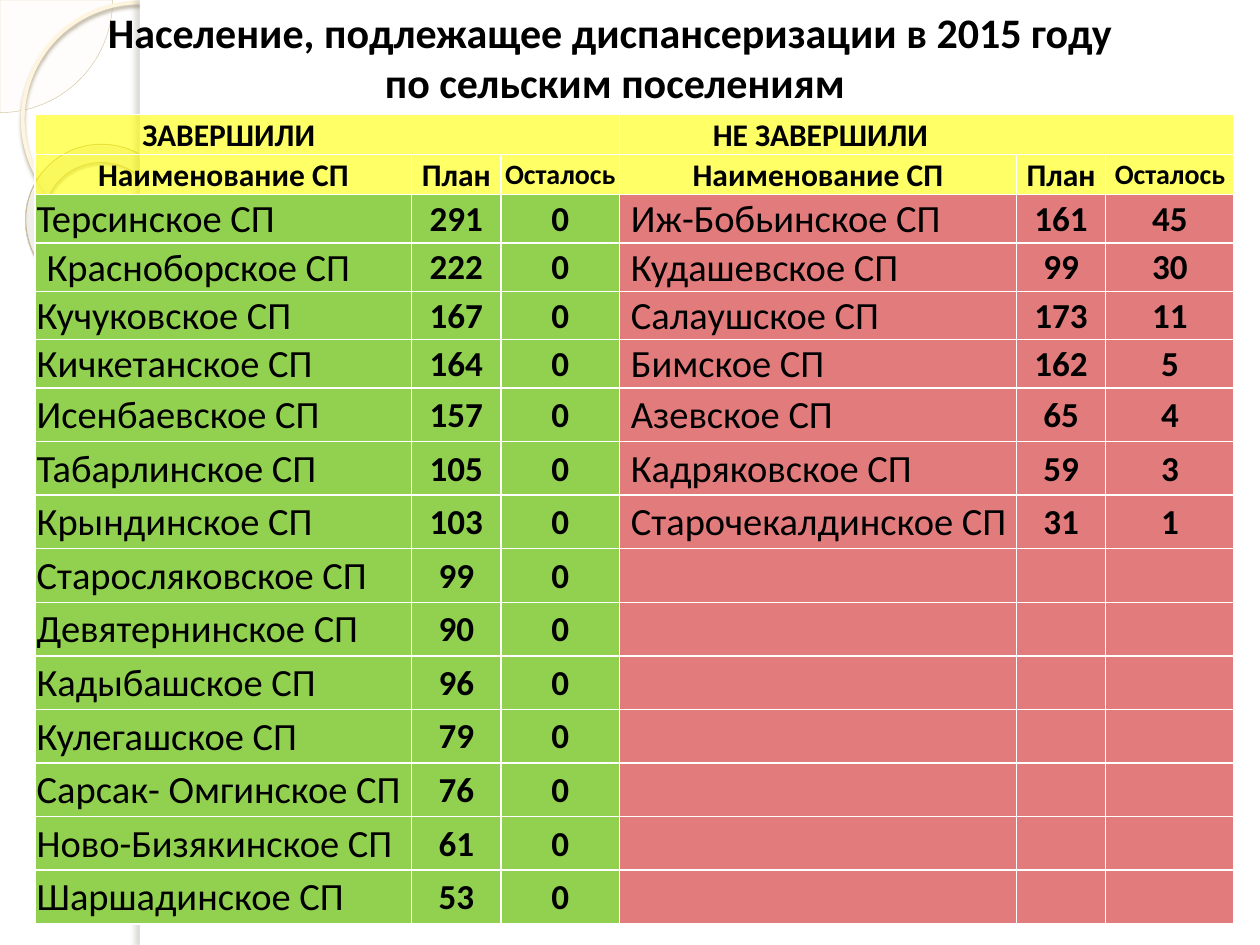
from itertools import zip_longest

from lxml.etree import SubElement
from pptx import Presentation
from pptx.dml.color import RGBColor
from pptx.enum.shapes import MSO_SHAPE
from pptx.enum.text import MSO_ANCHOR, MSO_AUTO_SIZE, PP_ALIGN
from pptx.oxml import parse_xml
from pptx.oxml.ns import nsdecls, qn
from pptx.util import Cm, Pt

YELLOW, GREEN, RED = "FFFF00", "92D050", "E17B7C"

COMPLETED = [
    ("Терсинское СП", 291), ("Красноборское СП", 222), ("Кучуковское СП", 167),
    ("Кичкетанское СП", 164), ("Исенбаевское СП", 157), ("Табарлинское СП", 105),
    ("Крындинское СП", 103), ("Старосляковское СП", 99), ("Девятернинское СП", 90),
    ("Кадыбашское СП", 96), ("Кулегашское СП", 79), ("Сарсак- Омгинское СП", 76),
    ("Ново-Бизякинское СП", 61), ("Шаршадинское СП", 53),
]
NOT_COMPLETED = [
    ("Иж-Бобьинское СП", 161, 45), ("Кудашевское СП", 99, 30),
    ("Салаушское СП", 173, 11), ("Бимское СП", 162, 5), ("Азевское СП", 65, 4),
    ("Кадряковское СП", 59, 3), ("Старочекалдинское СП", 31, 1),
]
COLUMN_WIDTHS = [7.59, 1.8, 2.39, 8, 1.8, 2.59]
ROW_HEIGHTS = [0.79] * 2 + [0.95] * 4 + [1.08] * 10
INDENT = 0.2


def color(hex_string):
    return RGBColor.from_string(hex_string)


def set_alpha(fill, percent):
    element = fill._xPr.find(qn("a:solidFill"))[0]
    SubElement(element, qn("a:alpha"), val=str(percent * 1000))


class SlideBuilder:
    font_name = "Calibri"
    text_color = "000000"
    border_color = "FFFFFF"

    def __init__(self, slide):
        self.slide = slide

    def format_text(self, paragraph, size, bold=True, alignment=PP_ALIGN.CENTER):
        paragraph.alignment = alignment
        values = {"name": self.font_name, "size": Pt(size), "bold": bold}
        for run in paragraph.runs:
            for name, value in values.items():
                setattr(run.font, name, value)
            run.font.color.rgb = color(self.text_color)

    def shape(self, kind, box, fill=None, alpha=None, line=None, shadow=None,
              adjustments=(), rotation=0):
        """Line is (color, points); shadow is (color, alpha, blur, distance, angle)."""
        shape = self.slide.shapes.add_shape(kind, *map(Cm, box))
        shape.rotation = rotation
        shape.shadow.inherit = False
        for index, value in enumerate(adjustments):
            shape.adjustments[index] = value
        if fill:
            shape.fill.solid()
            shape.fill.fore_color.rgb = color(fill)
            if alpha:
                set_alpha(shape.fill, alpha)
        else:
            shape.fill.background()
        if line:
            shape.line.color.rgb = color(line[0])
            shape.line.width = Pt(line[1])
        else:
            shape.line.fill.background()
        if shadow:
            self.add_shadow(shape, *shadow)
        return shape

    def add_shadow(self, shape, shade, alpha, blur, distance, angle):
        effects = shape._element.spPr.find(qn("a:effectLst"))
        outer = SubElement(effects, qn("a:outerShdw"), blurRad=str(Pt(blur)),
                           dist=str(Pt(distance)), dir=str(angle * 60000),
                           rotWithShape="0")
        shade_element = SubElement(outer, qn("a:srgbClr"), val=shade)
        SubElement(shade_element, qn("a:alpha"), val=str(alpha * 1000))

    def radial_gradient(self, shape, stops, center):
        """Stops are (position, color, alpha); center holds left, top, right, bottom in percent."""
        stop_xml = "".join(
            f'<a:gs pos="{position * 1000}"><a:srgbClr val="{shade}">'
            f'<a:alpha val="{alpha * 1000}"/></a:srgbClr></a:gs>'
            for position, shade, alpha in stops)
        sides = " ".join(f'{side}="{value * 1000}"' for side, value in zip("ltrb", center))
        properties = shape._element.spPr
        properties.replace(properties.find(qn("a:noFill")), parse_xml(
            f'<a:gradFill {nsdecls("a")} rotWithShape="1"><a:gsLst>{stop_xml}</a:gsLst>'
            f'<a:path path="circle"><a:fillToRect {sides}/></a:path></a:gradFill>'))

    def title(self, text, box, size):
        title = self.slide.shapes.title
        # Bring the title in front of the decoration.
        self.slide.shapes._spTree.append(title._element)
        for name, value in zip(("left", "top", "width", "height"), box):
            setattr(title, name, Cm(value))
        frame = title.text_frame
        frame.text = text
        values = {"word_wrap": False, "auto_size": MSO_AUTO_SIZE.NONE,
                  "vertical_anchor": MSO_ANCHOR.TOP}
        for name, value in values.items():
            setattr(frame, name, value)
        for paragraph in frame.paragraphs:
            paragraph.line_spacing = 1.0
            paragraph.space_before = Pt(0)
            self.format_text(paragraph, size)

    def table(self, left, top, widths, heights):
        frame = self.slide.shapes.add_table(
            len(heights), len(widths), Cm(left), Cm(top), Cm(sum(widths)), Cm(sum(heights)))
        table = frame.table
        table.first_row = table.horz_banding = False
        for column, width in zip(table.columns, widths):
            column.width = Cm(width)
        for row, height in zip(table.rows, heights):
            row.height = Cm(height)
        return table

    def cell(self, cell, text, fill, size, alpha=None, indent=0.0, **text_format):
        margins = {"margin_left": 0.03 + indent, "margin_right": 0.03,
                   "margin_top": 0.03, "margin_bottom": 0}
        for name, value in margins.items():
            setattr(cell, name, Cm(value))
        cell.vertical_anchor = MSO_ANCHOR.MIDDLE
        properties = cell._tc.get_or_add_tcPr()
        for side in ("lnL", "lnR", "lnT", "lnB"):
            border = SubElement(properties, qn(f"a:{side}"), w=str(Pt(1)))
            border_fill = SubElement(border, qn("a:solidFill"))
            SubElement(border_fill, qn("a:srgbClr"), val=self.border_color)
        cell.fill.solid()
        cell.fill.fore_color.rgb = color(fill)
        if alpha:
            set_alpha(cell.fill, alpha)
        if text:
            cell.text = text
            self.format_text(cell.text_frame.paragraphs[0], size, **text_format)


def add_decoration(builder):
    builder.shape(MSO_SHAPE.PIE, (-2.27, -2.27, 4.54, 4.54), "FEFAF4", alpha=33,
                  line=("D3C39F", 0.25), adjustments=(0, 54.02))
    builder.shape(MSO_SHAPE.OVAL, (0.46, 0.05, 4.72, 4.72), line=("FFF5DE", 2.15),
                  shadow=("B0A68F", 85, 2, 2, 90))
    ring = builder.shape(MSO_SHAPE.DONUT, (0.51, 2.92, 3.12, 3.07), line=("C7B893", 0.58),
                         shadow=("5A5444", 35, 1, 1.2, 75), adjustments=(0.12,), rotation=38.6)
    builder.radial_gradient(
        ring, [(0, "FFFCF6", 70), (70, "FFFEFB", 55), (100, "F0D28E", 60)],
        (-408, -50, 508, 150))
    builder.shape(MSO_SHAPE.RECTANGLE, (2.82, 0, 22.58, 19.05), "FFFFFF")
    builder.shape(MSO_SHAPE.RECTANGLE, (2.82, 0, 0.2, 19.05), "FFFFFF",
                  shadow=("736F63", 25, 3, 3, 180))


def add_settlement_table(builder):
    table = builder.table(0.71, 2.31, COLUMN_WIDTHS, ROW_HEIGHTS)
    for first, heading, indent in ((0, "ЗАВЕРШИЛИ", 2.13), (3, "НЕ ЗАВЕРШИЛИ", 1.85)):
        table.cell(0, first).merge(table.cell(0, first + 2))
        builder.cell(table.cell(0, first), heading, YELLOW, 18, alpha=60, indent=indent,
                     alignment=PP_ALIGN.LEFT)
        labels = (("Наименование СП", 18), ("План", 18), ("Осталось", 16))
        for column, (label, size) in enumerate(labels, first):
            builder.cell(table.cell(1, column), label, YELLOW, size, alpha=60)

    completed = [(name, plan, 0) for name, plan in COMPLETED]
    pairs = zip_longest(completed, NOT_COMPLETED, fillvalue=("", "", ""))
    for row, groups in enumerate(pairs, 2):
        for first, fill, (name, *numbers) in zip((0, 3), (GREEN, RED), groups):
            indented = first == 3 or name == "Красноборское СП"
            builder.cell(table.cell(row, first), name, fill, 22, bold=False,
                         indent=INDENT if indented else 0, alignment=PP_ALIGN.LEFT)
            for column, number in enumerate(numbers, first + 1):
                builder.cell(table.cell(row, column), str(number), fill, 20)


def main():
    presentation = Presentation()
    presentation.slide_width, presentation.slide_height = Cm(25.4), Cm(19.05)
    builder = SlideBuilder(presentation.slides.add_slide(presentation.slide_layouts[5]))
    add_decoration(builder)
    builder.title("Население, подлежащее диспансеризации в 2015 году \nпо сельским поселениям",
                  (1.7, 0, 21.39, 2.31), 24)
    add_settlement_table(builder)
    presentation.save("out.pptx")


if __name__ == "__main__":
    main()
